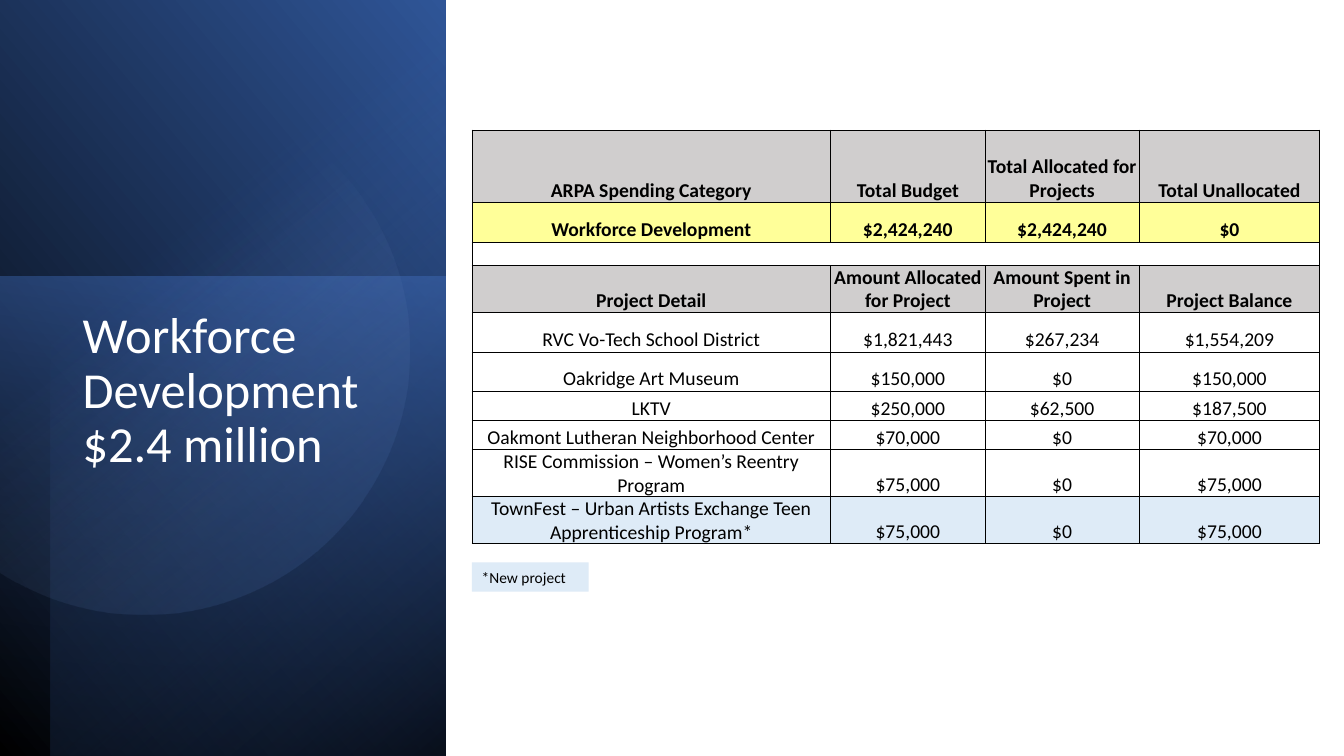
"""Build the Workforce Development budget slide."""
from dataclasses import dataclass
from math import acos, cos, sin

from lxml.etree import SubElement
from pptx import Presentation
from pptx.dml.color import RGBColor
from pptx.enum.shapes import MSO_SHAPE
from pptx.enum.text import MSO_ANCHOR, PP_ALIGN
from pptx.oxml.ns import qn
from pptx.shapes.autoshape import Shape
from pptx.slide import Slide
from pptx.table import _Cell as Cell
from pptx.text.text import _Paragraph as Paragraph
from pptx.util import Inches, Pt

BLACK = RGBColor(0x00, 0x00, 0x00)
WHITE = RGBColor(0xFF, 0xFF, 0xFF)
ROYAL = RGBColor(0x2F, 0x55, 0x97)
BLUE = RGBColor(0x44, 0x72, 0xC4)
NAVY = RGBColor(0x20, 0x38, 0x64)
SKY = RGBColor(0x8F, 0xAA, 0xDC)
GREY = RGBColor(0xD0, 0xCE, 0xCE)
YELLOW = RGBColor(0xFF, 0xFF, 0x99)
PALE = RGBColor(0xDE, 0xEB, 0xF7)
FONT = "Calibri"
COLUMN_WIDTHS = (3.56, 1.53, 1.53, 1.79)


@dataclass(frozen=True)
class Stop:
    position: int
    color: RGBColor
    opacity: int = 100


@dataclass(frozen=True)
class Panel:
    box: tuple[float, float, float, float]
    rotation: int
    flipped: bool
    stops: tuple[Stop, Stop]
    angle: int


@dataclass(frozen=True)
class BudgetRow:
    height: float
    texts: tuple[str, ...] = ()
    fill: RGBColor = WHITE
    bold: bool = False


PANELS = (
    Panel((-1.55, 1.55, 7.52, 4.42), 90, True,
          (Stop(0, BLACK), Stop(100, ROYAL)), 310),
    Panel((-0.17, 2.91, 4.76, 4.42), 270, False,
          (Stop(0, BLUE, 50), Stop(100, NAVY, 0)), 190),
    Panel((-1.29, 1.79, 7.5, 3.92), 270, True,
          (Stop(0, BLACK, 59), Stop(69, BLUE, 0)), 220),
)

BUDGET = (
    BudgetRow(0.72, ("ARPA Spending Category", "Total Budget",
                     "Total Allocated for Projects", "Total Unallocated"), GREY, True),
    BudgetRow(0.39, ("Workforce Development", "$2,424,240", "$2,424,240", "$0"), YELLOW, True),
    BudgetRow(0.16),
    BudgetRow(0.45, ("Project Detail", "Amount Allocated for Project",
                     "Amount Spent in Project", "Project Balance"), GREY, True),
    BudgetRow(0.39, ("RVC Vo-Tech School District", "$1,821,443", "$267,234", "$1,554,209")),
    BudgetRow(0.39, ("Oakridge Art Museum", "$150,000", "$0", "$150,000")),
    BudgetRow(0.29, ("LKTV", "$250,000", "$62,500", "$187,500")),
    BudgetRow(0.29, ("Oakmont Lutheran Neighborhood Center", "$70,000", "$0", "$70,000")),
    BudgetRow(0.29, ("RISE Commission – Women’s Reentry Program", "$75,000", "$0", "$75,000")),
    BudgetRow(0.29, ("TownFest – Urban Artists Exchange Teen Apprenticeship Program*",
                     "$75,000", "$0", "$75,000"), PALE),
)


def add_text(paragraph: Paragraph, text: str, size: int, color: RGBColor,
             bold: bool = False) -> None:
    """Append one formatted run."""
    run = paragraph.add_run()
    run.text = text
    run.font.name = FONT
    run.font.size = Pt(size)
    run.font.bold = bold
    run.font.color.rgb = color


def paint_gradient(shape: Shape, stops: tuple[Stop, Stop], angle: int) -> None:
    """Fill a shape with a gradient whose angle runs clockwise."""
    shape.shadow.inherit = False
    shape.line.fill.background()
    shape.fill.gradient()
    shape.fill.gradient_angle = 360 - angle
    for target, stop in zip(shape.fill.gradient_stops, stops):
        target.position = stop.position / 100
        target.color.rgb = stop.color
    colors = shape.element.spPr.iter(qn("a:srgbClr"))
    for color, stop in zip(list(colors), stops):
        SubElement(color, qn("a:alpha"), val=str(stop.opacity * 1000))


def add_panel(slide: Slide, panel: Panel) -> None:
    """Draw one rotated gradient rectangle."""
    backdrop = slide.shapes.add_shape(MSO_SHAPE.RECTANGLE, *map(Inches, panel.box))
    backdrop.rotation = panel.rotation
    if panel.flipped:
        backdrop.element.spPr.find(qn("a:xfrm")).set("flipH", "1")
    paint_gradient(backdrop, panel.stops, panel.angle)


def add_disc(slide: Slide) -> None:
    """Draw the translucent circle cut off at the slide's left edge."""
    center_x, center_y, radius, steps = 1.43, 3.47, 2.63, 120
    reach = acos(-center_x / radius)
    angles = [reach * (2 * step / steps - 1) for step in range(steps + 1)]
    points = [(Inches(center_x + radius * cos(a)), Inches(center_y + radius * sin(a)))
              for a in angles]
    builder = slide.shapes.build_freeform(*points[0])
    builder.add_line_segments(points[1:], close=True)
    paint_gradient(builder.convert_to_shape(), (Stop(39, SKY, 0), Stop(100, ROYAL, 26)), 52)


def add_title(slide: Slide) -> None:
    """Write the slide title."""
    title = slide.shapes.add_textbox(Inches(0.72), Inches(3.03), Inches(3.15), Inches(3.36))
    title.text_frame.word_wrap = True
    heading = title.text_frame.paragraphs[0]
    heading.line_spacing = 0.9
    add_text(heading, "Workforce Development", 36, WHITE)
    heading.add_line_break()
    add_text(heading, "$2.4 million", 36, WHITE)


def format_cell(cell: Cell, fill: RGBColor) -> None:
    """Set the borders, fill and margins of a cell."""
    properties = cell._tc.get_or_add_tcPr()
    for side in ("a:lnL", "a:lnR", "a:lnT", "a:lnB"):
        border = SubElement(properties, qn(side), w=str(Pt(0.5)))
        solid = SubElement(border, qn("a:solidFill"))
        SubElement(solid, qn("a:srgbClr"), val=str(BLACK))
    cell.fill.solid()
    cell.fill.fore_color.rgb = fill
    cell.vertical_anchor = MSO_ANCHOR.BOTTOM
    cell.margin_left = cell.margin_right = cell.margin_top = cell.margin_bottom = 0


def add_budget(slide: Slide) -> None:
    """Draw the budget table."""
    budget = slide.shapes.add_table(
        len(BUDGET), len(COLUMN_WIDTHS), Inches(4.68), Inches(1.29),
        Inches(sum(COLUMN_WIDTHS)), Inches(sum(row.height for row in BUDGET))).table
    budget.first_row = budget.horz_banding = False
    for column, width in zip(budget.columns, COLUMN_WIDTHS):
        column.width = Inches(width)
    for row, entry in zip(budget.rows, BUDGET):
        row.height = Inches(entry.height)
        for cell in row.cells:
            format_cell(cell, entry.fill)
            if not entry.texts:
                SubElement(cell.text_frame.paragraphs[0]._p, qn("a:endParaRPr"), sz="1400")
        for cell, text in zip(row.cells, entry.texts):
            paragraph = cell.text_frame.paragraphs[0]
            paragraph.alignment = PP_ALIGN.CENTER
            add_text(paragraph, text, 14, BLACK, entry.bold)
        if not entry.texts:
            row.cells[0].merge(row.cells[len(COLUMN_WIDTHS) - 1])


def add_footnote(slide: Slide) -> None:
    """Draw the key for new projects."""
    footnote = slide.shapes.add_shape(MSO_SHAPE.RECTANGLE, Inches(4.68), Inches(5.58),
                                      Inches(1.16), Inches(0.29))
    footnote.shadow.inherit = False
    footnote.fill.solid()
    footnote.fill.fore_color.rgb = PALE
    footnote.line.fill.background()
    footnote.text_frame.word_wrap = True
    footnote.text_frame.vertical_anchor = MSO_ANCHOR.MIDDLE
    paragraph = footnote.text_frame.paragraphs[0]
    paragraph.alignment = PP_ALIGN.LEFT
    add_text(paragraph, "*New project", 11, BLACK)


def main() -> None:
    """Build and save the presentation."""
    deck = Presentation()
    deck.slide_width, deck.slide_height = Inches(13.33), Inches(7.5)
    slide = deck.slides.add_slide(deck.slide_layouts[6])
    for panel in PANELS:
        add_panel(slide, panel)
    add_disc(slide)
    add_title(slide)
    add_budget(slide)
    add_footnote(slide)
    deck.save("out.pptx")


if __name__ == "__main__":
    main()
